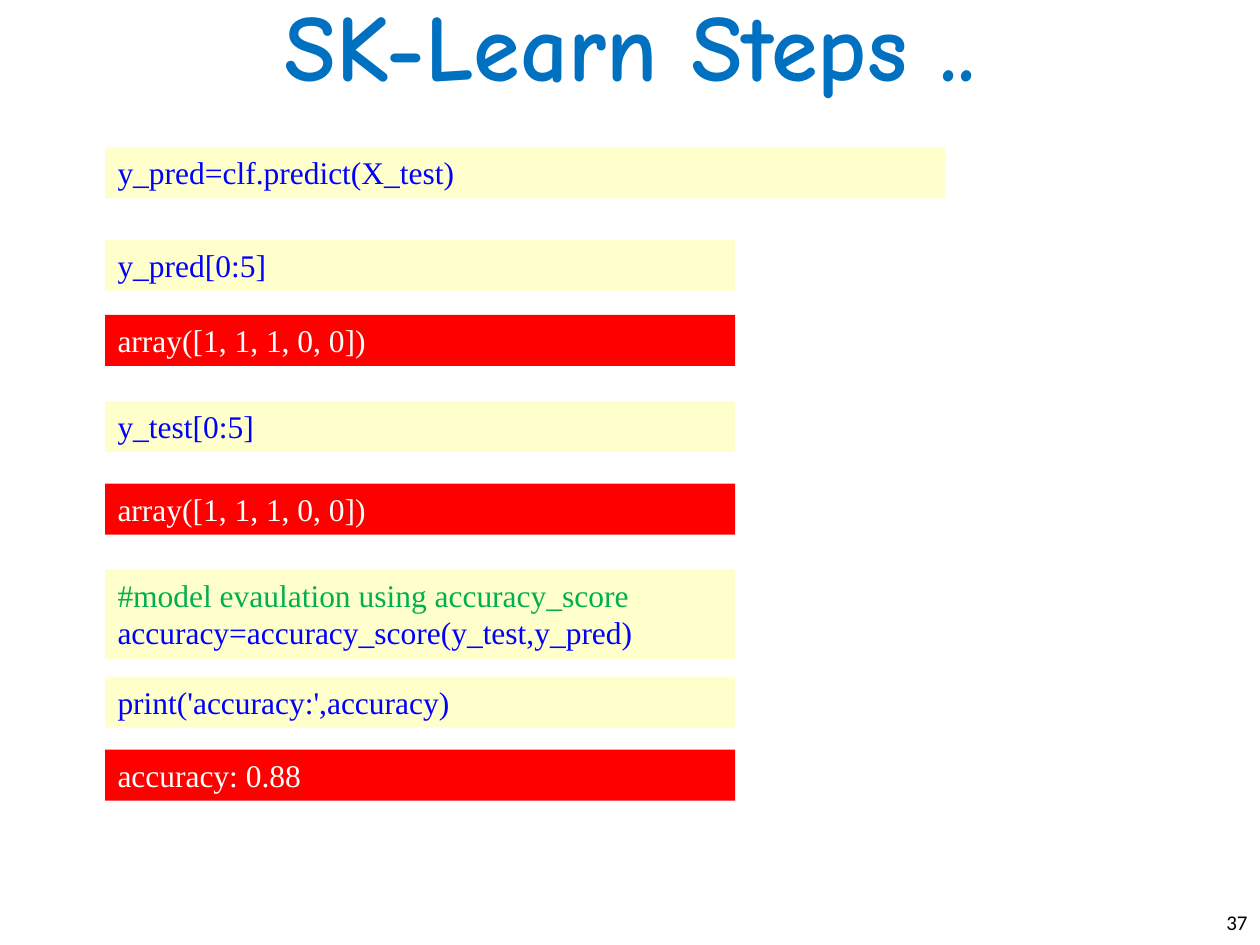
"""Build the slide of prediction and accuracy steps."""
from pptx import Presentation
from pptx.dml.color import RGBColor
from pptx.enum.shapes import MSO_SHAPE
from pptx.enum.text import MSO_ANCHOR, PP_ALIGN
from pptx.util import Cm, Pt

COLORS = {
    "title": "0070C0",
    "input": "FFFFCC",
    "output": "FF0000",
    "code": "0000FF",
    "comment": "00B050",
    "result": "FFFFFF",
    "number": "000000",
}
TITLE = "SK-Learn Steps .."
PAGE_NUMBER = "37"
STEPS = [
    (2.97, "input", [("y_pred=clf.predict(X_test)", "code")]),
    (4.83, "input", [("y_pred[0:5]", "code")]),
    (6.35, "output", [("array([1, 1, 1, 0, 0])", "result")]),
    (8.08, "input", [("y_test[0:5]", "code")]),
    (9.75, "output", [("array([1, 1, 1, 0, 0])", "result")]),
    (11.48, "input", [("#model evaulation using accuracy_score", "comment"),
                      ("accuracy=accuracy_score(y_test,y_pred)", "code")]),
    (13.64, "input", [("print('accuracy:',accuracy)", "code")]),
    (15.11, "output", [("accuracy: 0.88", "result")]),
]
LEFT, WIDTH, FIRST_WIDTH = 2.12, 12.7, 16.93
LINE_HEIGHT, PADDING = 0.78, 0.25


def color(name):
    return RGBColor.from_string(COLORS[name])


def write(box, lines, font, size, align=PP_ALIGN.LEFT, bold=False):
    frame = box.text_frame
    frame.word_wrap = True
    for index, (text, color_name) in enumerate(lines):
        paragraph = frame.add_paragraph() if index else frame.paragraphs[0]
        paragraph.text = text
        paragraph.alignment = align
        paragraph.font.name = font
        paragraph.font.size = Pt(size)
        paragraph.font.bold = bold
        paragraph.font.color.rgb = color(color_name)
    return frame


def add_step(page, top, kind, lines, width):
    height = PADDING + LINE_HEIGHT * len(lines)
    box = page.shapes.add_shape(
        MSO_SHAPE.RECTANGLE, Cm(LEFT), Cm(top), Cm(width), Cm(height))
    box.shadow.inherit = False
    box.fill.solid()
    box.fill.fore_color.rgb = color(kind)
    box.line.fill.background()
    frame = write(box, lines, "Times New Roman", 18)
    frame.vertical_anchor = MSO_ANCHOR.TOP


def main():
    deck = Presentation()
    deck.slide_width, deck.slide_height = Cm(25.4), Cm(19.05)
    page = deck.slides.add_slide(deck.slide_layouts[6])

    title = page.shapes.add_textbox(Cm(0), Cm(-0.03), Cm(25.4), Cm(2.16))
    frame = write(title, [(TITLE, "title")], "Comic Neue", 54, PP_ALIGN.CENTER, True)
    frame.vertical_anchor = MSO_ANCHOR.MIDDLE
    frame.margin_left = frame.margin_right = Cm(0.18)
    frame.margin_top = frame.margin_bottom = Cm(0.08)
    frame.paragraphs[0].line_spacing = 0.87

    for index, (top, kind, lines) in enumerate(STEPS):
        add_step(page, top, kind, lines, WIDTH if index else FIRST_WIDTH)

    number = page.shapes.add_textbox(Cm(24.33), Cm(18.21), Cm(1.07), Cm(0.84))
    write(number, [(PAGE_NUMBER, "number")], "Calibri", 12, PP_ALIGN.RIGHT)
    deck.save("out.pptx")


if __name__ == "__main__":
    main()
